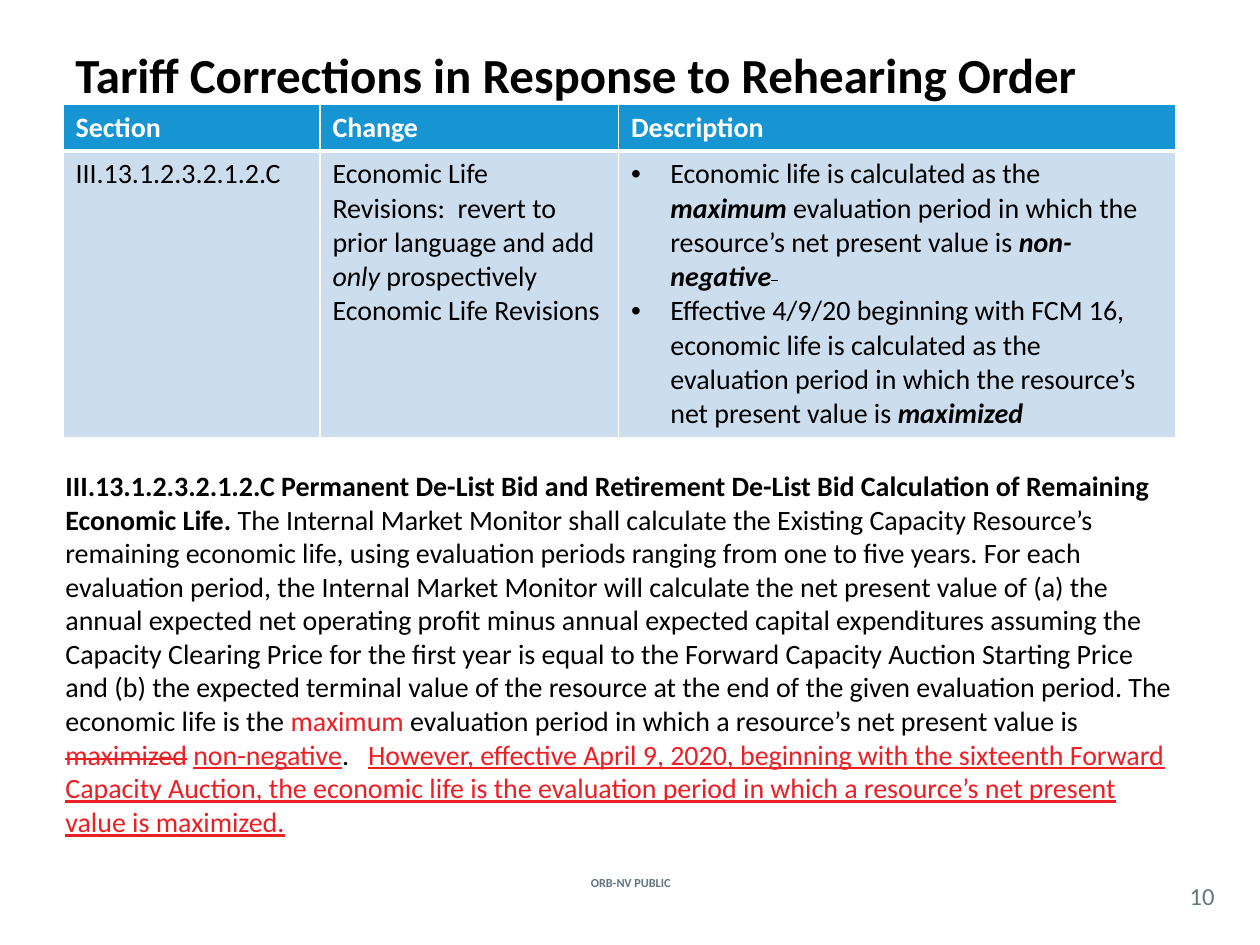
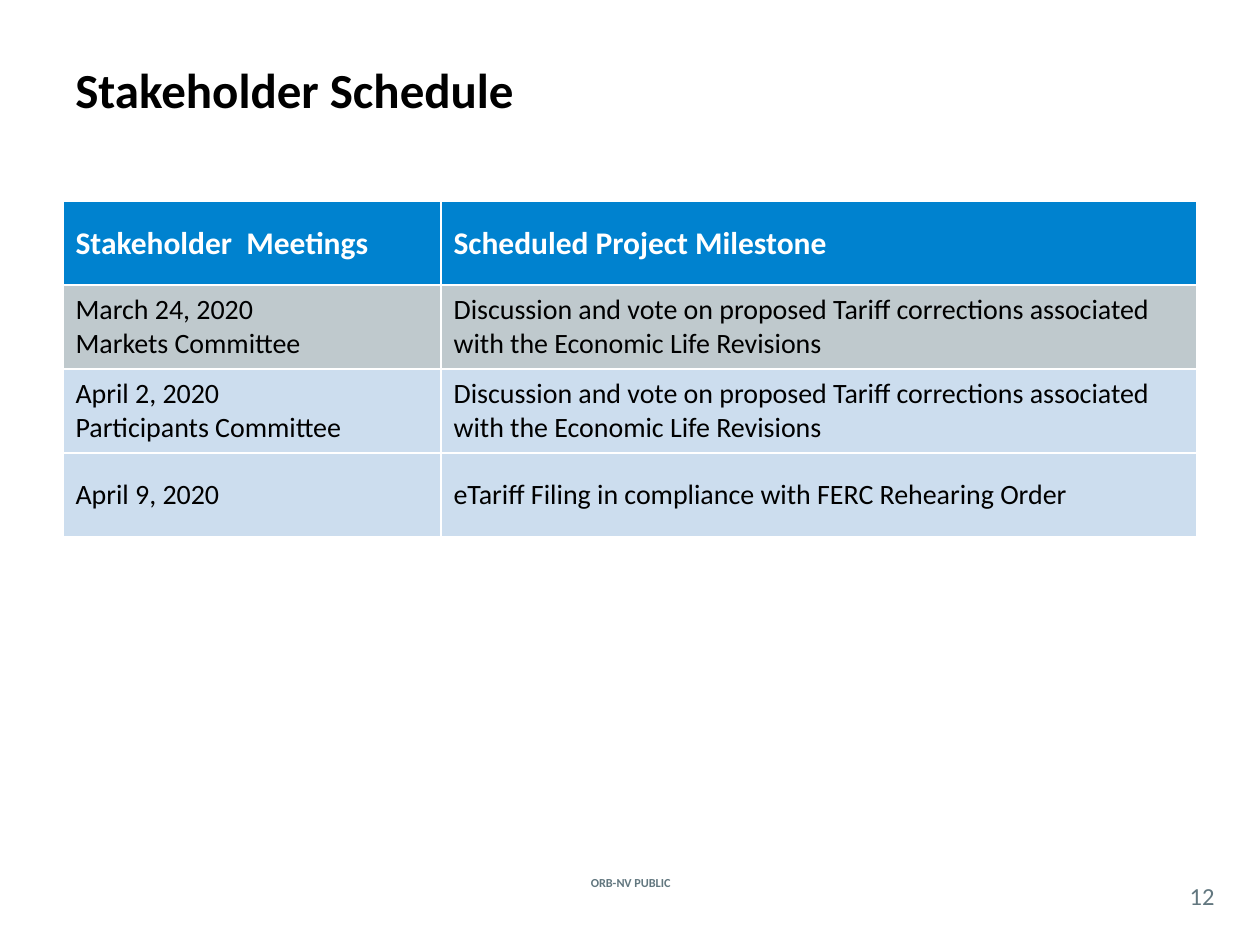
from dataclasses import dataclass
from lxml.etree import SubElement
from pptx import Presentation
from pptx.dml.color import RGBColor as RGB
from pptx.enum.text import MSO_ANCHOR as ANC, PP_ALIGN as AL
from pptx.oxml import parse_xml
from pptx.oxml.ns import nsdecls, qn
from pptx.util import Cm, Pt


@dataclass(frozen=True)
class Theme:
    font: str = "Calibri"
    black: str = "000000"
    white: str = "FFFFFF"
    grey: str = "62777F"
    red: str = "EC1F25"
    head_blue: str = "1795D2"
    deep_blue: str = "0082CF"
    pale_blue: str = "CCDDEE"
    done_grey: str = "BFC9CD"
    title: int = 28
    head: int = 18
    body: int = 16
    number: int = 14
    footer: int = 7


T = Theme()


def add_runs(p, runs, size, color):
    for text, style in runs:
        r = p.add_run()
        r.text = text
        r.font.name = T.font
        r.font.size = Pt(size)
        r.font.bold = "b" in style
        r.font.italic = "i" in style
        r.font.underline = "u" in style
        r.font.color.rgb = RGB.from_string(T.red if "r" in style else color)
        if "s" in style:
            r._r.get_or_add_rPr().set("strike", "sngStrike")


def add_box(s, box, runs, size, color, align=AL.LEFT, anchor=ANC.MIDDLE, inset=None):
    tf = s.shapes.add_textbox(*map(Cm, box)).text_frame
    tf.word_wrap = True
    tf.vertical_anchor = anchor
    if inset is not None:
        tf.margin_left = tf.margin_right = tf.margin_top = tf.margin_bottom = Cm(inset)
    p = tf.paragraphs[0]
    p.alignment = align
    add_runs(p, runs, size, color)


REVISION = "Discussion and vote on proposed Tariff corrections associated with the Economic Life Revisions"

tariff = dict(
    title="Tariff Corrections in Response to Rehearing Order", title_top=0, title_height=2.97,
    number="10", top=2.11, cols=[5.18, 6.02, 11.23], rows=[0.91, 5.78],
    head_size=T.body, head_line=3, anchor=ANC.TOP, bullet_col=2,
    fills=[T.head_blue, T.pale_blue],
    cells=[
        [[[(name, "b")]] for name in ("Section", "Change", "Description")],
        [
            [[("III.13.1.2.3.2.1.2.C", "")]],
            [[("Economic Life Revisions:  revert to prior language and add ", ""), ("only", "i"),
              (" prospectively Economic Life Revisions", "")]],
            [[("Economic life is calculated as the ", ""), ("maximum", "bi"),
              (" evaluation period in which the resource’s net present value is ", ""),
              ("non-negative", "bi"), (" ", "s")],
             [("Effective 4/9/20 beginning with FCM 16, economic life is calculated as the evaluation "
               "period in which the resource’s net present value is ", ""), ("maximized", "bi")]],
        ],
    ],
    body=[
        ("III.13.1.2.3.2.1.2.C Permanent De-List Bid and Retirement De-List Bid Calculation of "
         "Remaining Economic Life. ", "b"),
        ("The Internal Market Monitor shall calculate the Existing Capacity Resource’s remaining "
         "economic life, using evaluation periods ranging from one to five years. For each evaluation "
         "period, the Internal Market Monitor will calculate the net present value of (a) the annual "
         "expected net operating profit minus annual expected capital expenditures assuming the "
         "Capacity Clearing Price for the first year is equal to the Forward Capacity Auction Starting "
         "Price and (b) the expected terminal value of the resource at the end of the given evaluation "
         "period. The economic life is the ", ""),
        ("maximum", "r"),
        (" evaluation period in which a resource’s net present value is ", ""),
        ("maximized", "rs"),
        (" ", ""),
        ("non-negative", "ru"),
        (".   ", ""),
        ("However, effective April 9, 2020, beginning with the sixteenth Forward Capacity Auction, the "
         "economic life is the evaluation period in which a resource’s net present value is "
         "maximized.", "ru"),
    ],
)

schedule = dict(
    title="Stakeholder Schedule", title_top=0.2, title_height=3.18,
    number="12", top=4.06, cols=[7.62, 15.24], rows=[1.69] * 4,
    head_size=T.head, head_line=1, anchor=ANC.MIDDLE, bullet_col=None,
    fills=[T.deep_blue, T.done_grey, T.pale_blue, T.pale_blue],
    cells=[
        [[[("Stakeholder  Meetings", "b")]], [[("Scheduled Project Milestone", "b")]]],
        [[[("March 24, 2020", "")], [("Markets Committee", "")]], [[(REVISION, "")]]],
        [[[("April 2, 2020", "")], [("Participants Committee", "")]], [[(REVISION, "")]]],
        [[[("April 9, 2020", "")]], [[("eTariff Filing in compliance with FERC Rehearing Order", "")]]],
    ],
    body=[],
)

prs = Presentation()
prs.slide_width, prs.slide_height = Cm(25.4), Cm(19.05)

for page in (tariff, schedule):
    s = prs.slides.add_slide(prs.slide_layouts[6])
    add_box(s, (10.85, 17.58, 3.73, 0.43), [("ORB-NV PUBLIC", "b")], T.footer, T.grey, AL.CENTER)
    add_box(s, (23.7, 17.68, 1.07, 0.74), [(page["number"], "")], T.number, T.grey, AL.CENTER, inset=0)
    add_box(s, (1.27, page["title_top"], 22.86, page["title_height"]),
            [(page["title"], "b")], T.title, T.black)

    cols, rows = page["cols"], page["rows"]
    table = s.shapes.add_table(len(rows), len(cols), Cm(1.27), Cm(page["top"]),
                               Cm(sum(cols)), Cm(sum(rows))).table
    for col, width in zip(table.columns, cols):
        col.width = Cm(width)
    for row, height in zip(table.rows, rows):
        row.height = Cm(height)

    for i, row in enumerate(page["cells"]):
        size, color = (page["head_size"], T.white) if i == 0 else (T.body, T.black)
        lines = {"L": 1, "R": 1, "T": page["head_line"] if i == 1 else 1,
                 "B": page["head_line"] if i == 0 else 1}
        for j, paragraphs in enumerate(row):
            cell = table.cell(i, j)
            cell.vertical_anchor = page["anchor"]
            cell.fill.solid()
            cell.fill.fore_color.rgb = RGB.from_string(page["fills"][i])
            for n, (side, width) in enumerate(lines.items()):
                cell._tc.get_or_add_tcPr().insert(n, parse_xml(
                    f'<a:ln{side} {nsdecls("a")} w="{Pt(width)}"><a:solidFill>'
                    f'<a:srgbClr val="{T.white}"/></a:solidFill></a:ln{side}>'))
            tf = cell.text_frame
            for n, runs in enumerate(paragraphs):
                p = tf.add_paragraph() if n else tf.paragraphs[0]
                if i and j == page["bullet_col"]:
                    pPr = p._p.get_or_add_pPr()
                    pPr.set("marL", str(Cm(0.79)))
                    pPr.set("indent", str(-Cm(0.79)))
                    SubElement(pPr, qn("a:buFont")).set("typeface", "Arial")
                    SubElement(pPr, qn("a:buChar")).set("char", "•")
                add_runs(p, runs, size, color)

    if page["body"]:
        add_box(s, (1.07, 9.32, 22.86, 7.77), page["body"], T.body, T.black, anchor=ANC.TOP)

prs.save("out.pptx")
